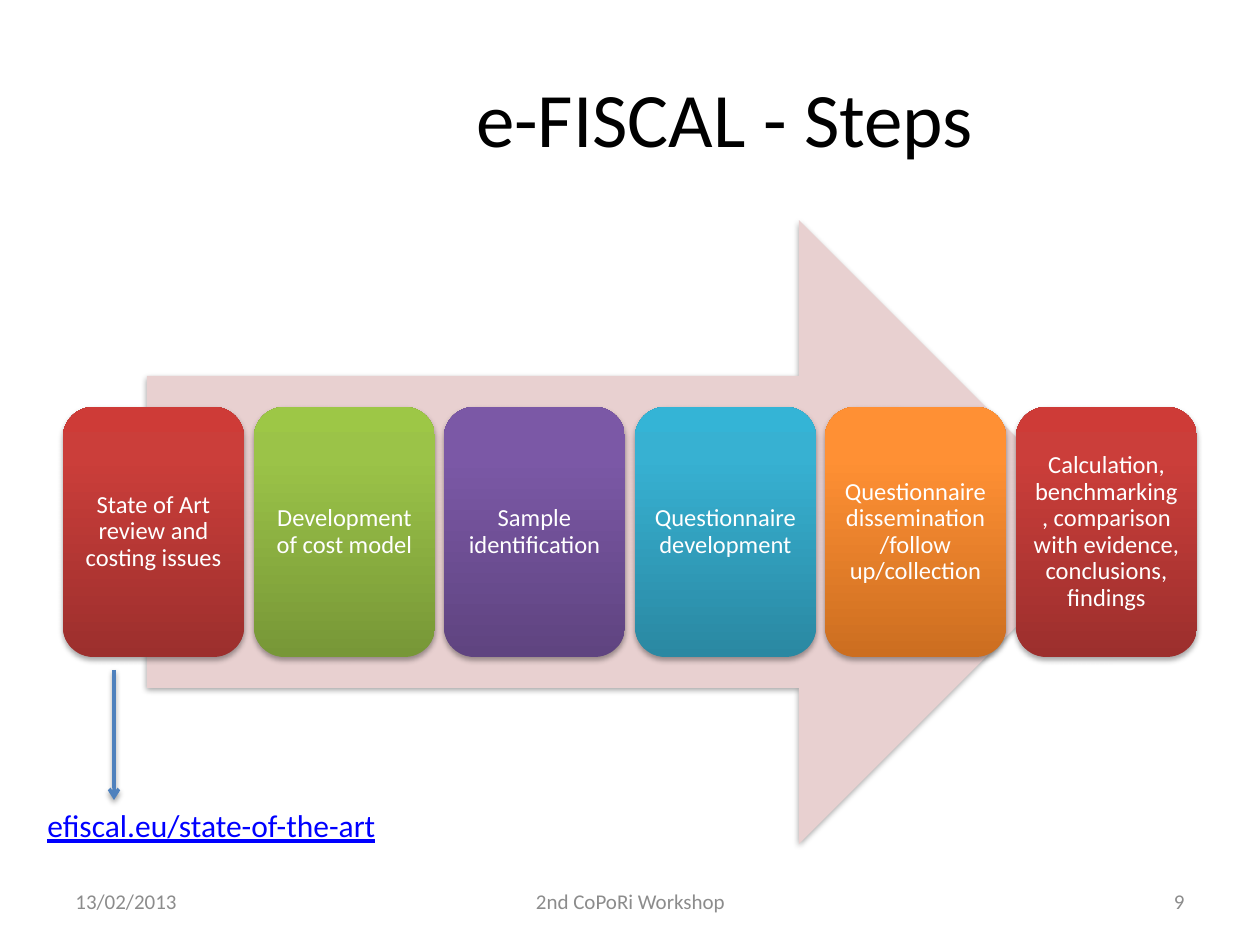
import copy
from dataclasses import dataclass

import lxml.etree
import pptx
import pptx.dml.color
import pptx.enum.shapes
import pptx.enum.text
import pptx.oxml.ns
import pptx.util

qn = pptx.oxml.ns.qn
ALIGN = pptx.enum.text.PP_ALIGN
SHAPE = pptx.enum.shapes.MSO_SHAPE
UNIT = 914400 / 126


@dataclass(frozen=True)
class Theme:
    font: str = "Calibri"
    title: int = 44
    link: int = 18
    step: int = 14
    foot: int = 12
    black: str = "000000"
    white: str = "FFFFFF"
    grey: str = "8C8C8C"
    blue: str = "0000FF"
    line: str = "4F81BD"
    pale: str = "E8D0D0"
    red: tuple = ("9C2F2D", "CB3E3A", "CE3B37")
    green: tuple = ("779737", "9BC348", "9DC746")
    purple: tuple = ("5F4480", "7B58A6", "7C57A8")
    teal: tuple = ("2A88A2", "37B1D2", "34B4D6")
    orange: tuple = ("CC6E20", "FF9034", "FF9136")


THEME = Theme()
STEPS = [
    ("State of Art review and costing issues", THEME.red),
    ("Development of cost model", THEME.green),
    ("Sample identification", THEME.purple),
    ("Questionnaire development", THEME.teal),
    ("Questionnaire dissemination/follow up/collection", THEME.orange),
    ("Calculation, benchmarking, comparison with evidence, conclusions, findings",
     THEME.red),
]


def px(*values):
    return [pptx.util.Emu(round(v * UNIT)) for v in values]


def rgb(code):
    return pptx.dml.color.RGBColor.from_string(code)


def write(shape, text, size, color, align=ALIGN.CENTER):
    frame = shape.text_frame
    frame.text = text
    frame.word_wrap = True
    frame.vertical_anchor = pptx.enum.text.MSO_ANCHOR.MIDDLE
    para = frame.paragraphs[0]
    para.alignment = align
    font = para.runs[0].font
    font.name = THEME.font
    font.size = pptx.util.Pt(size)
    font.color.rgb = rgb(color)
    return frame


def add_text(slide, box, text, size, color, align=ALIGN.CENTER):
    return write(slide.shapes.add_textbox(*px(*box)), text, size, color, align)


def add_shade(shape, alpha):
    props = shape._element.spPr
    node = props.find(qn("a:effectLst"))
    if node is None:
        node = lxml.etree.SubElement(props, qn("a:effectLst"))
    shade = lxml.etree.SubElement(
        node, qn("a:outerShdw"), blurRad="40000", dist="23000",
        dir="5400000", rotWithShape="0")
    color = lxml.etree.SubElement(shade, qn("a:srgbClr"), val=THEME.black)
    lxml.etree.SubElement(color, qn("a:alpha"), val=str(alpha * 1000))


def add_form(slide, kind, box):
    shape = slide.shapes.add_shape(kind, *px(*box))
    shape.line.fill.background()
    shape.shadow.inherit = False
    add_shade(shape, 35)
    return shape


def blend(shape, colors):
    shape.fill.gradient()
    shape.fill.gradient_angle = 90
    stops = shape._element.spPr.find(".//" + qn("a:gsLst"))
    stops.append(copy.deepcopy(stops[-1]))
    for stop, place, code in zip(shape.fill.gradient_stops, (0, 0.8, 1), colors):
        stop.position = place
        stop.color.rgb = rgb(code)


def add_step(slide, box, text, colors):
    shape = add_form(slide, SHAPE.ROUNDED_RECTANGLE, box)
    blend(shape, colors)
    frame = write(shape, text, THEME.step, THEME.white)
    frame.paragraphs[0].line_spacing = 0.9
    inset = px(8)[0]
    frame.margin_left = frame.margin_right = inset
    frame.margin_top = frame.margin_bottom = inset


def add_steps(slide):
    left, top, span, width, height = 63, 407, 1134, 181, 250
    pitch = (span - width) / (len(STEPS) - 1)
    for i, (text, colors) in enumerate(STEPS):
        box = (round(left + i * pitch), top, width, height)
        add_step(slide, box, text, colors)


def add_arrow(slide, start, end):
    line = slide.shapes.add_connector(
        pptx.enum.shapes.MSO_CONNECTOR.STRAIGHT, *px(*start, *end))
    line.line.color.rgb = rgb(THEME.line)
    line.line.width = pptx.util.Pt(2)
    lxml.etree.SubElement(line.line._get_or_add_ln(), qn("a:tailEnd"), type="arrow")
    add_shade(line, 38)


def add_foot(slide):
    for left, width, text, align in (
        (63, 294, "13/02/2013", ALIGN.LEFT),
        (431, 399, "2nd CoPoRi Workshop", ALIGN.CENTER),
        (903, 294, "9", ALIGN.RIGHT),
    ):
        add_text(slide, (left, 876, width, 50), text, THEME.foot, THEME.grey, align)


def main():
    deck = pptx.Presentation()
    deck.slide_width, deck.slide_height = px(1260, 945)
    slide = deck.slides.add_slide(deck.slide_layouts[6])
    add_text(slide, (253, 38, 944, 157), "e-FISCAL - Steps",
             THEME.title, THEME.black)
    arrow = add_form(slide, SHAPE.RIGHT_ARROW, (147, 220, 964, 624))
    arrow.fill.solid()
    arrow.fill.fore_color.rgb = rgb(THEME.pale)
    add_steps(slide)
    add_foot(slide)
    link = add_text(slide, (35, 800, 360, 50), "efiscal.eu/state-of-the-art",
                    THEME.link, THEME.blue, ALIGN.LEFT)
    link.word_wrap = False
    link.vertical_anchor = pptx.enum.text.MSO_ANCHOR.TOP
    link.paragraphs[0].runs[0].font.underline = True
    add_arrow(slide, (114, 670), (114, 800))
    deck.save("out.pptx")


if __name__ == "__main__":
    main()
